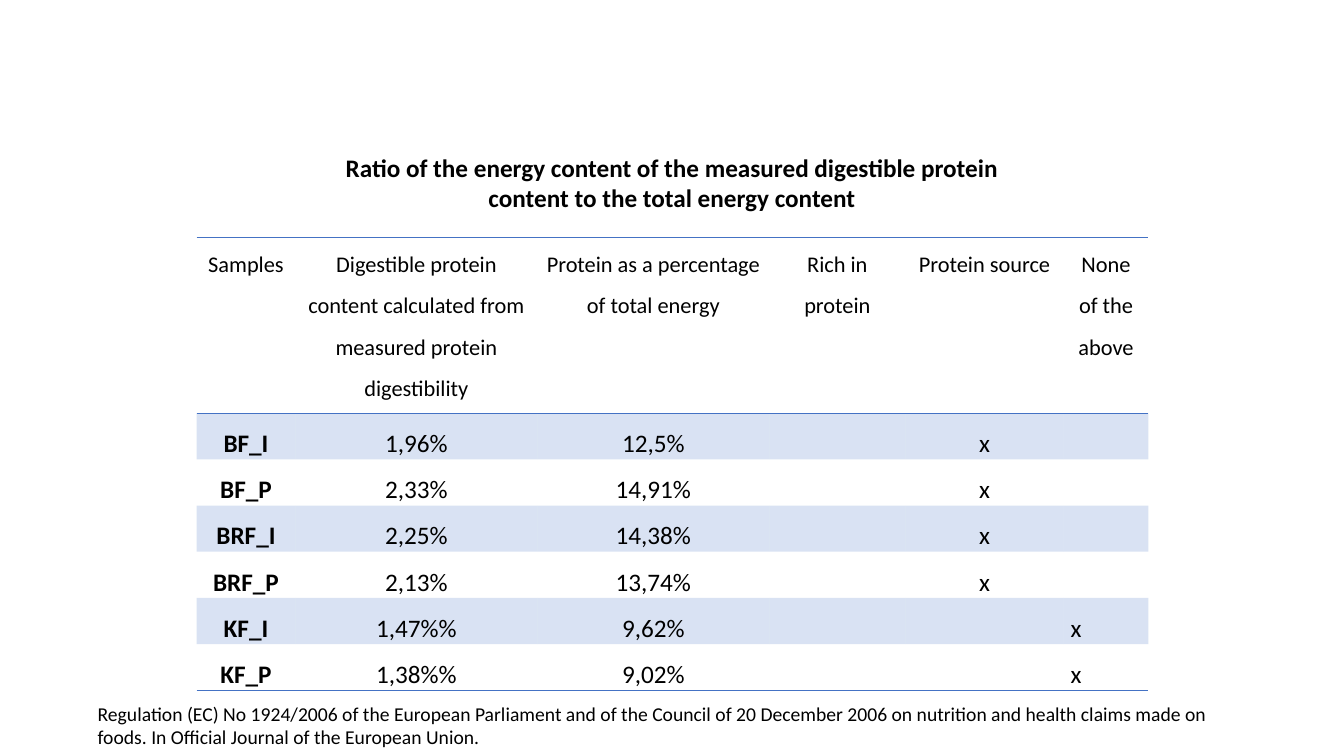
from lxml.etree import SubElement
from pptx import Presentation
from pptx.dml.color import RGBColor
from pptx.enum.text import PP_ALIGN
from pptx.oxml.ns import qn
from pptx.util import Inches, Pt

HUES = {"ink": "000000", "blue": "4472C4"}
COLS = [0.98, 2.4, 2.3, 1.35, 1.57, 0.84]
ROWS = [1.74] + [0.44] * 6
DATA = [
    ["Samples", "Digestible protein content calculated from measured protein digestibility",
     "Protein as a percentage of total energy", "Rich in protein", "Protein source",
     "None of the above"],
    ["BF_I", "1,96%", "12,5%", "", "x", ""],
    ["BF_P", "2,33%", "14,91%", "", "x", ""],
    ["BRF_I", "2,25%", "14,38%", "", "x", ""],
    ["BRF_P", "2,13%", "13,74%", "", "x", ""],
    ["KF_I", "1,47%%", "9,62%", "", "", "x"],
    ["KF_P", "1,38%%", "9,02%", "", "", "x"],
]
NOTES = [
    ("Ratio of the energy content of the measured digestible protein content "
     "to the total energy content", (3.33, 1.46, 6.67, 0.71), 18, True, PP_ALIGN.CENTER),
    ("Regulation (EC) No 1924/2006 of the European Parliament and of the Council of "
     "20 December 2006 on nutrition and health claims made on foods. "
     "In Official Journal of the European Union.",
     (0.87, 6.91, 11.59, 0.57), 14, False, PP_ALIGN.LEFT),
]


def write(para, text, size, bold, align):
    para.alignment = align
    run = para.add_run()
    run.text = text
    run.font.name = "Calibri"
    run.font.size = Pt(size)
    run.font.bold = bold
    run.font.color.rgb = RGBColor.from_string(HUES["ink"])


def rule(cell, side):
    line = SubElement(cell._tc.get_or_add_tcPr(), qn("a:" + side), w=str(Pt(1)))
    fill = SubElement(line, qn("a:solidFill"))
    SubElement(fill, qn("a:srgbClr"), val=HUES["blue"])


deck = Presentation()
deck.slide_width, deck.slide_height = Inches(13.33), Inches(7.5)
slide = deck.slides.add_slide(deck.slide_layouts[6])

frame = slide.shapes.add_table(len(ROWS), len(COLS), Inches(1.95), Inches(2.36),
                               Inches(sum(COLS)), Inches(sum(ROWS)))
table = frame.table
table.first_row = table.horz_banding = False
for style in frame.element.iter(qn("a:tableStyleId")):
    style.text = "{2D5ABB26-0587-4C30-8999-92F81FD0307C}"
for col, width in zip(table.columns, COLS):
    col.width = Inches(width)

for r, (tall, texts) in enumerate(zip(ROWS, DATA)):
    table.rows[r].height = Inches(tall)
    for c, text in enumerate(texts):
        cell = table.cell(r, c)
        cell.margin_left = cell.margin_right = Inches(0.07)
        cell.margin_top = cell.margin_bottom = 0
        if r == 0:
            rule(cell, "lnT")
        if r in (0, len(ROWS) - 1):
            rule(cell, "lnB")
        if r % 2:
            cell.fill.solid()
            cell.fill.fore_color.rgb = RGBColor.from_string(HUES["blue"])
            for tint in cell._tc.tcPr.iter(qn("a:srgbClr")):
                SubElement(tint, qn("a:alpha"), val="20000")
        else:
            cell.fill.background()
        if text:
            para = cell.text_frame.paragraphs[0]
            para.line_spacing = 1.5
            para.space_after = Pt(8)
            align = PP_ALIGN.JUSTIFY if r and c == 5 else PP_ALIGN.CENTER
            write(para, text, 18 if r else 16, r > 0 and c == 0, align)

for text, place, size, bold, align in NOTES:
    box = slide.shapes.add_textbox(*map(Inches, place))
    box.text_frame.word_wrap = True
    write(box.text_frame.paragraphs[0], text, size, bold, align)

deck.save("out.pptx")
